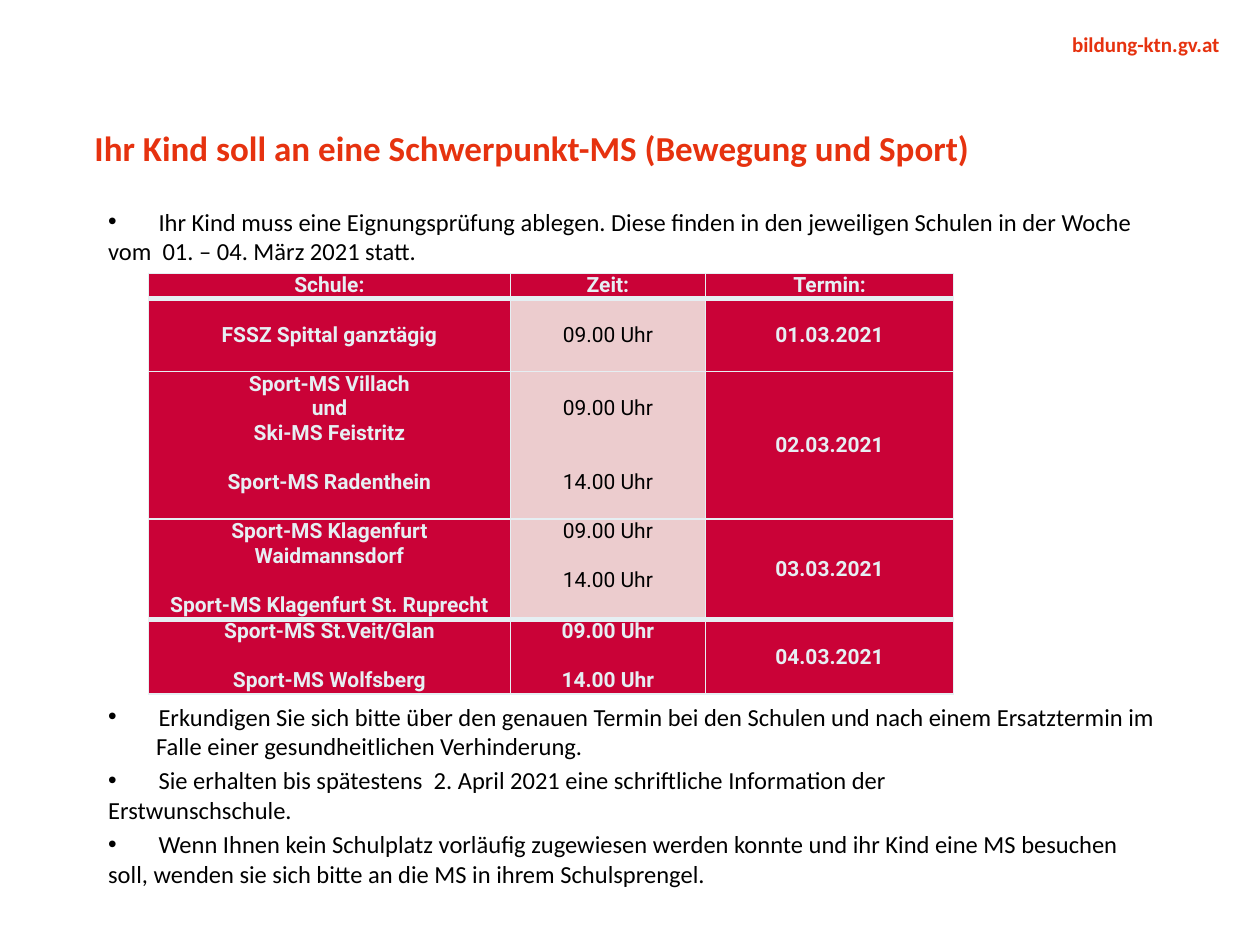
from lxml import etree
from pptx import Presentation
from pptx.dml.color import RGBColor
from pptx.enum.text import MSO_ANCHOR, PP_ALIGN
from pptx.oxml.ns import qn
from pptx.util import Inches, Pt

CENTER, RIGHT, LEFT = PP_ALIGN.CENTER, PP_ALIGN.RIGHT, PP_ALIGN.LEFT
TOP, MIDDLE = MSO_ANCHOR.TOP, MSO_ANCHOR.MIDDLE

COLORS = {
    "accent": "E6320F",
    "text": "000000",
    "crimson": "CA0237",
    "pink": "ECCCCE",
    "pale": "E6EFF3",
}
GRID = 0.1  # the slide is 100 columns by 75 rows
TAB_STOP = 4
COLUMN_WIDTHS = [28.7, 15.5, 19.7]
ROW_HEIGHTS = [1.9, 5.8, 11.7, 7.8, 5.8]
LINE = 14  # points, one line of table text

HEADINGS = ["Schule:", "Zeit:", "Termin:"]
# Schools, times, date; the gap is the space above the last line of a cell
SCHEDULE = [
    {"schools": ["FSSZ Spittal ganztägig"], "times": ["09.00 Uhr"],
     "date": "01.03.2021", "school_anchor": MIDDLE, "time_anchor": MIDDLE},
    {"schools": ["Sport-MS Villach", "und", "Ski-MS Feistritz", "Sport-MS Radenthein"],
     "times": ["09.00 Uhr", "14.00 Uhr"], "date": "02.03.2021",
     "time_anchor": MIDDLE, "time_gap": 2 * LINE},
    {"schools": ["Sport-MS Klagenfurt Waidmannsdorf", "Sport-MS Klagenfurt St. Ruprecht"],
     "times": ["09.00 Uhr", "14.00 Uhr"], "date": "03.03.2021"},
    {"schools": ["Sport-MS St.Veit/Glan", "Sport-MS Wolfsberg"],
     "times": ["09.00 Uhr", "14.00 Uhr"], "date": "04.03.2021"},
]
EXAM_NOTE = [
    "Ihr Kind muss eine Eignungsprüfung ablegen. Diese finden in den jeweiligen "
    "Schulen in der Woche\vvom  01. – 04. März 2021 statt.",
]
FOLLOW_UP_NOTES = [
    "Erkundigen Sie sich bitte über den genauen Termin bei den Schulen und nach "
    "einem Ersatztermin im Falle einer gesundheitlichen Verhinderung.",
    "Sie erhalten bis spätestens  2. April 2021 eine schriftliche Information der"
    "\vErstwunschschule.",
    "Wenn Ihnen kein Schulplatz vorläufig zugewiesen werden konnte und ihr Kind "
    "eine MS besuchen\vsoll, wenden sie sich bitte an die MS in ihrem Schulsprengel.",
]


def grid(*units):
    return [Inches(unit * GRID) for unit in units]


def rgb(name):
    return RGBColor.from_string(COLORS[name])


def write(paragraph, text, *, size, color="text", font="Calibri", bold=False,
          align=LEFT, before=0, line_spacing=None):
    paragraph.text = text
    paragraph.alignment = align
    paragraph.space_before = Pt(before)
    if line_spacing:
        paragraph.line_spacing = Pt(line_spacing)
    paragraph.font.size = Pt(size)
    paragraph.font.name = font
    paragraph.font.bold = bold
    paragraph.font.color.rgb = rgb(color)


def paragraphs_for(frame, lines):
    """Yield each line with its paragraph, reusing the frame's first one."""
    for index, line in enumerate(lines):
        yield index, line, frame.add_paragraph() if index else frame.paragraphs[0]


def add_frame(slide, left, top, width, height, margin=0, wrap=True):
    frame = slide.shapes.add_textbox(*grid(left, top, width, height)).text_frame
    frame.word_wrap = wrap
    frame.margin_left = frame.margin_right = Inches(margin)
    frame.margin_top = frame.margin_bottom = Inches(margin / 2)
    return frame


def set_bullet(paragraph, hanging):
    properties = paragraph._p.get_or_add_pPr()
    indent = Inches(0.38) if hanging else 0
    properties.set("marL", str(indent))
    properties.set("indent", str(-indent))
    etree.SubElement(properties, qn("a:buFont"), typeface="Arial")
    etree.SubElement(properties, qn("a:buChar"), char="•")
    tabs = etree.SubElement(properties, qn("a:tabLst"))
    etree.SubElement(tabs, qn("a:tab"), pos=str(grid(TAB_STOP)[0]), algn="l")


def add_bullets(slide, top, height, notes, hanging_index=None):
    frame = add_frame(slide, 7.6, top, 85.8, height, margin=0.1)
    for index, note, paragraph in paragraphs_for(frame, notes):
        set_bullet(paragraph, index == hanging_index)
        write(paragraph, "\t" + note, size=14, before=2.8 if index else 0)


def set_borders(cell, top=1, bottom=1):
    properties = cell._tc.get_or_add_tcPr()
    for side, width in (("L", 1), ("R", 1), ("T", top), ("B", bottom)):
        border = etree.SubElement(properties, qn(f"a:ln{side}"), w=str(Pt(width)))
        fill = etree.SubElement(border, qn("a:solidFill"))
        etree.SubElement(fill, qn("a:srgbClr"), val=COLORS["pale"])


def fill_cell(cell, lines, *, anchor=TOP, gap=LINE, plain=False, top=1, bottom=1):
    set_borders(cell, top, bottom)
    cell.fill.solid()
    cell.fill.fore_color.rgb = rgb("pink" if plain else "crimson")
    cell.vertical_anchor = anchor
    cell.margin_left = cell.margin_right = Inches(0.07)
    cell.margin_top = cell.margin_bottom = 0
    for index, line, paragraph in paragraphs_for(cell.text_frame, lines):
        is_last = 0 < index == len(lines) - 1
        write(paragraph, line, size=12, font="Roboto", bold=not plain, align=CENTER,
              color="text" if plain else "pale", before=gap if is_last else 0)


def add_schedule(slide):
    place = grid(11.8, 21.7, sum(COLUMN_WIDTHS), sum(ROW_HEIGHTS))
    table = slide.shapes.add_table(len(ROW_HEIGHTS), len(COLUMN_WIDTHS), *place).table
    for column, width in zip(table.columns, grid(*COLUMN_WIDTHS)):
        column.width = width
    for row, height in zip(table.rows, grid(*ROW_HEIGHTS)):
        row.height = height

    for column, heading in enumerate(HEADINGS):
        fill_cell(table.cell(0, column), [heading], bottom=3)
    for row, entry in enumerate(SCHEDULE, start=1):
        is_last = row == len(SCHEDULE)
        edges = {"top": 3 if row == 1 or is_last else 1,
                 "bottom": 3 if row == len(SCHEDULE) - 1 else 1}
        fill_cell(table.cell(row, 0), entry["schools"],
                  anchor=entry.get("school_anchor", TOP), **edges)
        fill_cell(table.cell(row, 1), entry["times"], plain=not is_last,
                  anchor=entry.get("time_anchor", TOP),
                  gap=entry.get("time_gap", LINE), **edges)
        fill_cell(table.cell(row, 2), [entry["date"]], anchor=MIDDLE, **edges)


def main():
    presentation = Presentation()
    presentation.slide_width, presentation.slide_height = grid(100, 75)
    slide = presentation.slides.add_slide(presentation.slide_layouts[6])

    address = add_frame(slide, 72.7, 2.5, 24.1, 2)
    write(address.paragraphs[0], "bildung-ktn.gv.at", size=12, color="accent",
          bold=True, align=RIGHT)
    title = add_frame(slide, 7.5, 9.2, 89, 5)
    write(title.paragraphs[0], "Ihr Kind soll an eine Schwerpunkt-MS (Bewegung und Sport)",
          size=20, color="accent", bold=True, line_spacing=30)

    add_bullets(slide, 15.9, 5.8, EXAM_NOTE)
    add_schedule(slide)
    add_bullets(slide, 55.2, 16.5, FOLLOW_UP_NOTES, hanging_index=0)
    presentation.save("out.pptx")


if __name__ == "__main__":
    main()
